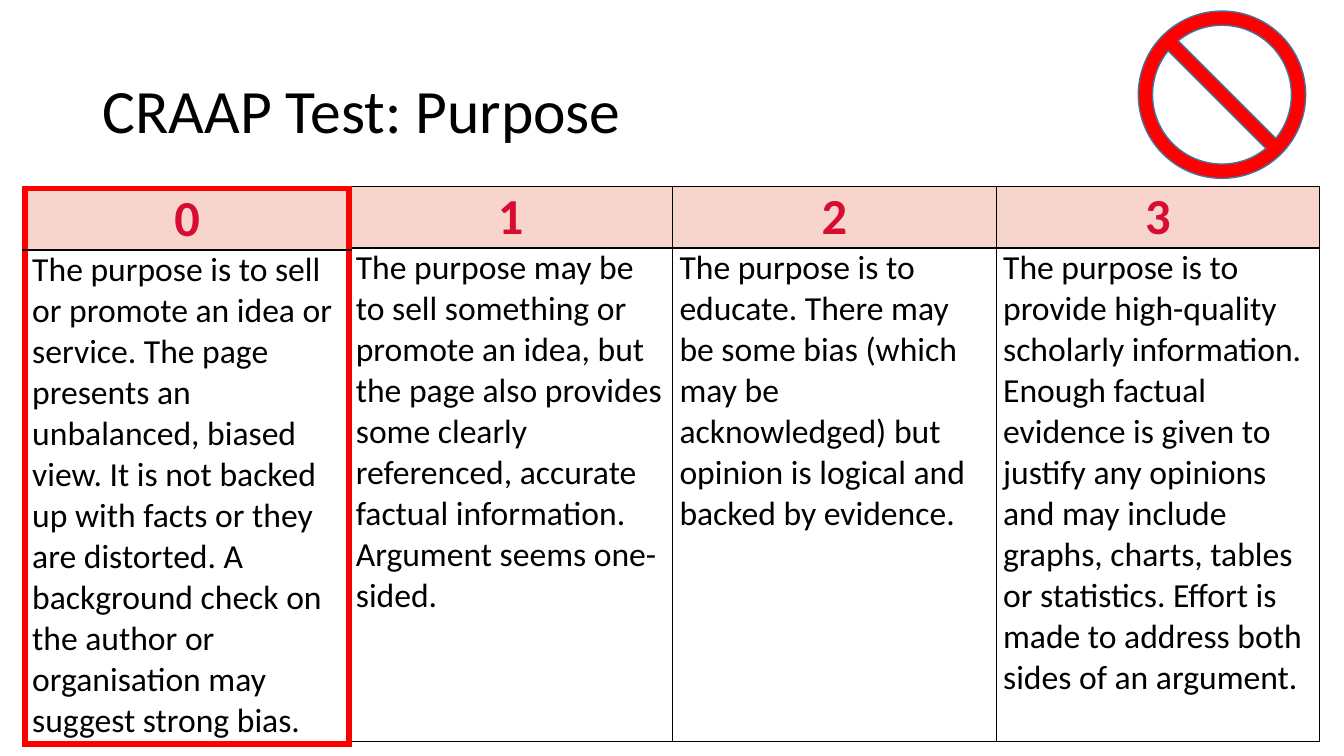
from lxml.etree import SubElement
from pptx import Presentation
from pptx.dml.color import RGBColor
from pptx.enum.shapes import MSO_SHAPE
from pptx.enum.text import MSO_ANCHOR, PP_ALIGN
from pptx.oxml.ns import qn
from pptx.util import Inches, Pt

FONT = "Calibri"
BLACK, RED, WHITE = "000000", "FF0000", "FFFFFF"
PINK, CRIMSON, BLUE = "F7D5CD", "D80C31", "43739E"
THIN, THICK = (BLACK, 1), (RED, 4.5)
ROWS = (0.61, 4.9)
SCORES = [
    ("0", "The purpose is to sell or promote an idea or service. The page "
          "presents an unbalanced, biased view. It is not backed up with facts "
          "or they are distorted. A background check on the author or "
          "organisation may suggest strong bias."),
    ("1", "The purpose may be to sell something or promote an idea, but the "
          "page also provides some clearly referenced, accurate factual "
          "information. Argument seems one-sided."),
    ("2", "The purpose is to educate. There may be some bias (which may be "
          "acknowledged) but opinion is logical and backed by evidence."),
    ("3", "The purpose is to provide high-quality scholarly information. "
          "Enough factual evidence is given to justify any opinions and may "
          "include graphs, charts, tables or statistics. Effort is made to "
          "address both sides of an argument."),
]


def color(code):
    return RGBColor.from_string(code)


def write(frame, text, size, ink=BLACK, bold=False, align=PP_ALIGN.LEFT,
          before=0, spacing=1.0):
    frame.word_wrap = True
    para = frame.paragraphs[0]
    para.alignment = align
    para.space_before = Pt(before)
    para.line_spacing = spacing
    run = para.add_run()
    run.text = text
    run.font.name, run.font.size, run.font.bold = FONT, Pt(size), bold
    run.font.color.rgb = color(ink)


def edge(cell, **sides):
    """Draw cell borders; each side is a (colour, points) pair."""
    props = cell._tc.get_or_add_tcPr()
    for index, side in enumerate("LRTB"):
        ink, width = sides[side]
        line = SubElement(props, qn(f"a:ln{side}"), w=str(Pt(width)))
        props.insert(index, line)
        fill = SubElement(line, qn("a:solidFill"))
        SubElement(fill, qn("a:srgbClr"), val=ink)


def add_title(slide, left, top, width, height):
    box = slide.shapes.add_textbox(*map(Inches, (left, top, width, height)))
    box.text_frame.vertical_anchor = MSO_ANCHOR.MIDDLE
    write(box.text_frame, "CRAAP Test: Purpose", 44, spacing=0.9)


def add_sign(slide, left, top, size):
    sign = slide.shapes.add_shape(
        MSO_SHAPE.NO_SYMBOL, *map(Inches, (left, top, size, size)))
    sign.adjustments[0] = 0.085
    sign.shadow.inherit = False
    sign.fill.solid()
    sign.fill.fore_color.rgb = color(RED)
    sign.line.color.rgb = color(BLUE)
    sign.line.width = Pt(1)


def add_scores(slide, left, top, width, scores, rim=THIN):
    """Place one column per score, with the rim around the whole table."""
    frame = slide.shapes.add_table(
        len(ROWS), len(scores), *map(Inches, (left, top, width, sum(ROWS))))
    table = frame.table
    table.first_row = table.horz_banding = False
    for row, height in zip(table.rows, ROWS):
        row.height = Inches(height)
    last = len(scores) - 1
    for col, (score, text) in enumerate(scores):
        table.columns[col].width = Inches(width / len(scores))
        head, body = table.cell(0, col), table.cell(1, col)
        head.vertical_anchor = MSO_ANCHOR.MIDDLE
        write(head.text_frame, score, 36, ink=CRIMSON, bold=True,
              align=PP_ALIGN.CENTER, before=12)
        write(body.text_frame, text, 24, before=3)
        for cell, fill in ((head, PINK), (body, WHITE)):
            cell.margin_left = cell.margin_right = Inches(0.07)
            cell.margin_top = cell.margin_bottom = 0
            cell.fill.solid()
            cell.fill.fore_color.rgb = color(fill)
            edge(cell,
                 L=rim if col == 0 else THIN,
                 R=rim if col == last else THIN,
                 T=rim if cell is head else THIN,
                 B=rim if cell is body else THIN)


def main():
    deck = Presentation()
    deck.slide_width, deck.slide_height = Inches(13.33), Inches(7.5)
    slide = deck.slides.add_slide(deck.slide_layouts[6])
    add_title(slide, 0.92, 0.4, 11.5, 1.45)
    add_sign(slide, 11.29, 0.11, 1.66)
    add_scores(slide, 0.25, 1.85, 12.84, SCORES)
    add_scores(slide, 0.25, 1.87, 3.21, SCORES[:1], rim=THICK)
    deck.save("out.pptx")


if __name__ == "__main__":
    main()
